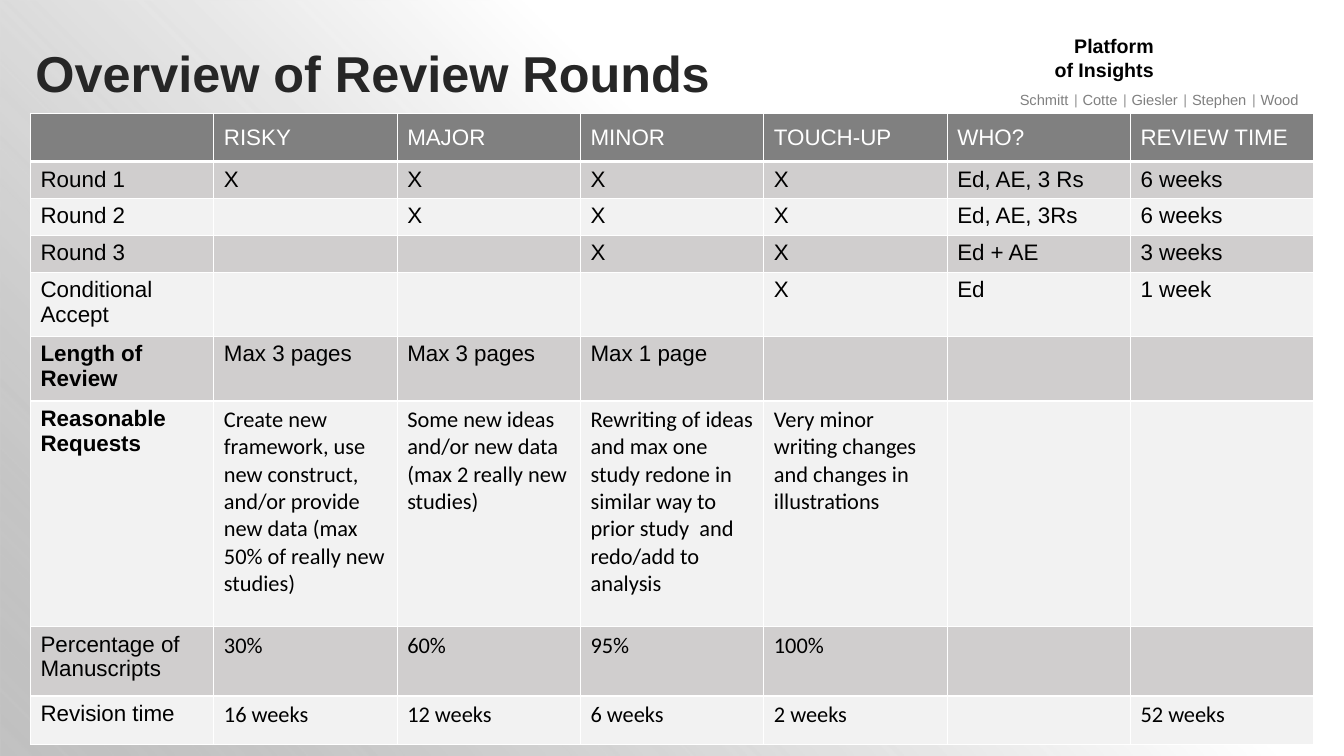
from lxml import etree
from pptx import Presentation
from pptx.dml.color import RGBColor
from pptx.enum.shapes import MSO_SHAPE
from pptx.enum.text import MSO_ANCHOR as Anchor, MSO_AUTO_SIZE as AutoSize, PP_ALIGN as Align
from pptx.oxml import parse_xml
from pptx.oxml.ns import nsdecls
from pptx.util import Cm, Pt

WHITE = RGBColor(0xFF, 0xFF, 0xFF)
BLACK = RGBColor(0, 0, 0)
INK = RGBColor(0x26, 0x26, 0x26)
GREY = RGBColor(0x80, 0x80, 0x80)
SHADE = RGBColor(0xA5, 0xA5, 0xA5)
DARK_BAND = RGBColor(0xD0, 0xCE, 0xCE)
LIGHT_BAND = RGBColor(0xF2, 0xF2, 0xF2)

COLUMN_WIDTH = 4.62
ROW_HEIGHTS = [1.22, 0.93, 0.93, 0.93, 1.62, 1.62, 5.69, 1.74, 1.22]
CALIBRI_FROM_ROW = 6
BOLD_LABELS = ("Length of Review", "Reasonable Requests")
ROUNDS = [
    ["", "RISKY", "MAJOR", "MINOR", "TOUCH-UP", "WHO?", "REVIEW TIME"],
    ["Round 1", "X", "X", "X", "X", "Ed, AE, 3 Rs", "6 weeks"],
    ["Round 2", "", "X", "X", "X", "Ed, AE, 3Rs", "6 weeks"],
    ["Round 3", "", "", "X", "X", "Ed + AE", "3 weeks"],
    ["Conditional Accept", "", "", "", "X", "Ed", "1 week"],
    ["Length of Review", "Max 3 pages", "Max 3 pages", "Max 1 page", "", "", ""],
    ["Reasonable Requests",
     "Create new framework, use new construct, and/or provide new data "
     "(max 50% of really new studies)",
     "Some new ideas\nand/or new data (max 2 really new studies)",
     "Rewriting of ideas and max one study redone in similar way to "
     "prior study  and redo/add to analysis",
     "Very minor writing changes and changes in illustrations", "", ""],
    ["Percentage of Manuscripts", "30%", "60%", "95%", "100%", "", ""],
    ["Revision time", "16 weeks", "12 weeks", "6 weeks", "2 weeks", "", "52 weeks"],
]
AUTHORS = ["Schmitt", "Cotte", "Giesler", "Stephen", "Wood"]


def style(para, size, color, name="Arial", bold=False):
    font = para.font
    font.size, font.name, font.bold = Pt(size), name, bold
    font.color.rgb = color


def add_backdrop(page, width, height):
    """White fading to translucent grey in the lower left corner."""
    box = page.shapes.add_shape(MSO_SHAPE.RECTANGLE, 0, 0, width, height)
    box.shadow.inherit = False
    box.line.fill.background()
    outline = box.line._get_or_add_ln()
    outline.addprevious(parse_xml(
        f'<a:gradFill {nsdecls("a")} rotWithShape="1"><a:gsLst>'
        f'<a:gs pos="0"><a:srgbClr val="{WHITE}"/></a:gs>'
        f'<a:gs pos="39000"><a:srgbClr val="{WHITE}"/></a:gs>'
        f'<a:gs pos="100000"><a:srgbClr val="{SHADE}"><a:alpha val="43000"/></a:srgbClr></a:gs>'
        '</a:gsLst><a:lin ang="8100000" scaled="0"/></a:gradFill>'))


def add_title(page, left, top, width, height):
    title = page.shapes.title
    title.left, title.top, title.width, title.height = left, top, width, height
    frame = title.text_frame
    frame.text = "Overview of Review Rounds"
    frame.vertical_anchor = Anchor.TOP
    frame.margin_top = Cm(0.33)
    para = frame.paragraphs[0]
    para.alignment = Align.LEFT
    style(para, 36, INK, bold=True)
    # Bring the title in front of the backdrop
    page.shapes._spTree.append(title._element)


def add_masthead(page, left, top, width, height):
    frame = page.shapes.add_textbox(left, top, width, height).text_frame
    frame.word_wrap = True
    frame.text = "Platform\nof Insights"
    for para in frame.paragraphs:
        para.alignment = Align.RIGHT
        para.line_spacing = Pt(16.8)
        style(para, 14, BLACK, bold=True)


def add_authors(page, left, top, width, height):
    frame = page.shapes.add_textbox(left, top, width, height).text_frame
    frame.word_wrap = False
    frame.auto_size = AutoSize.SHAPE_TO_FIT_TEXT
    para = frame.paragraphs[0]
    style(para, 10.5, GREY)
    for index, author in enumerate(AUTHORS):
        if index:
            divider = para.add_run()
            divider.text = "| "
            divider.font.name = "Calibri"
        span = para.add_run()
        span.text = author if author == AUTHORS[-1] else author + " "


def add_borders(cell, bottom):
    properties = cell._tc.get_or_add_tcPr()
    sides = [("lnL", 1), ("lnR", 1), ("lnT", 1), ("lnB", bottom)]
    for position, (side, points) in enumerate(sides):
        properties.insert(position, parse_xml(
            f'<a:{side} {nsdecls("a")} w="{Pt(points)}"><a:solidFill>'
            f'<a:srgbClr val="{WHITE}"/></a:solidFill></a:{side}>'))


def fill_cell(cell, text, row, column):
    header = row == 0
    cell.text = text
    cell.vertical_anchor = Anchor.MIDDLE if row < 2 else Anchor.TOP
    cell.fill.solid()
    cell.fill.fore_color.rgb = GREY if header else DARK_BAND if row % 2 else LIGHT_BAND
    name = "Calibri" if row >= CALIBRI_FROM_ROW and column else "Arial"
    for para in cell.text_frame.paragraphs:
        style(para, 16, WHITE if header else BLACK, name, text in BOLD_LABELS)
    add_borders(cell, 3 if header else 1)


def add_rounds_table(page, left, top):
    width, height = Cm(COLUMN_WIDTH * len(ROUNDS[0])), Cm(sum(ROW_HEIGHTS))
    table = page.shapes.add_table(len(ROUNDS), len(ROUNDS[0]), left, top, width, height).table
    table.horz_banding = False
    for column in table.columns:
        column.width = Cm(COLUMN_WIDTH)
    for row, (texts, row_height) in enumerate(zip(ROUNDS, ROW_HEIGHTS)):
        table.rows[row].height = Cm(row_height)
        for column, text in enumerate(texts):
            fill_cell(table.cell(row, column), text, row, column)


def main():
    deck = Presentation()
    deck.slide_width, deck.slide_height = Cm(33.87), Cm(19.05)
    page = deck.slides.add_slide(deck.slide_layouts[5])
    # Two layers deepen the grey
    for _ in range(2):
        add_backdrop(page, deck.slide_width, deck.slide_height)
    add_title(page, Cm(0.64), Cm(0.74), Cm(24.77), Cm(2.82))
    add_masthead(page, Cm(25.7), Cm(0.74), Cm(3.63), Cm(1.45))
    add_rounds_table(page, Cm(0.77), Cm(2.85))
    add_authors(page, Cm(25.45), Cm(2.16), Cm(7.67), Cm(0.71))
    deck.save("out.pptx")


if __name__ == "__main__":
    main()
